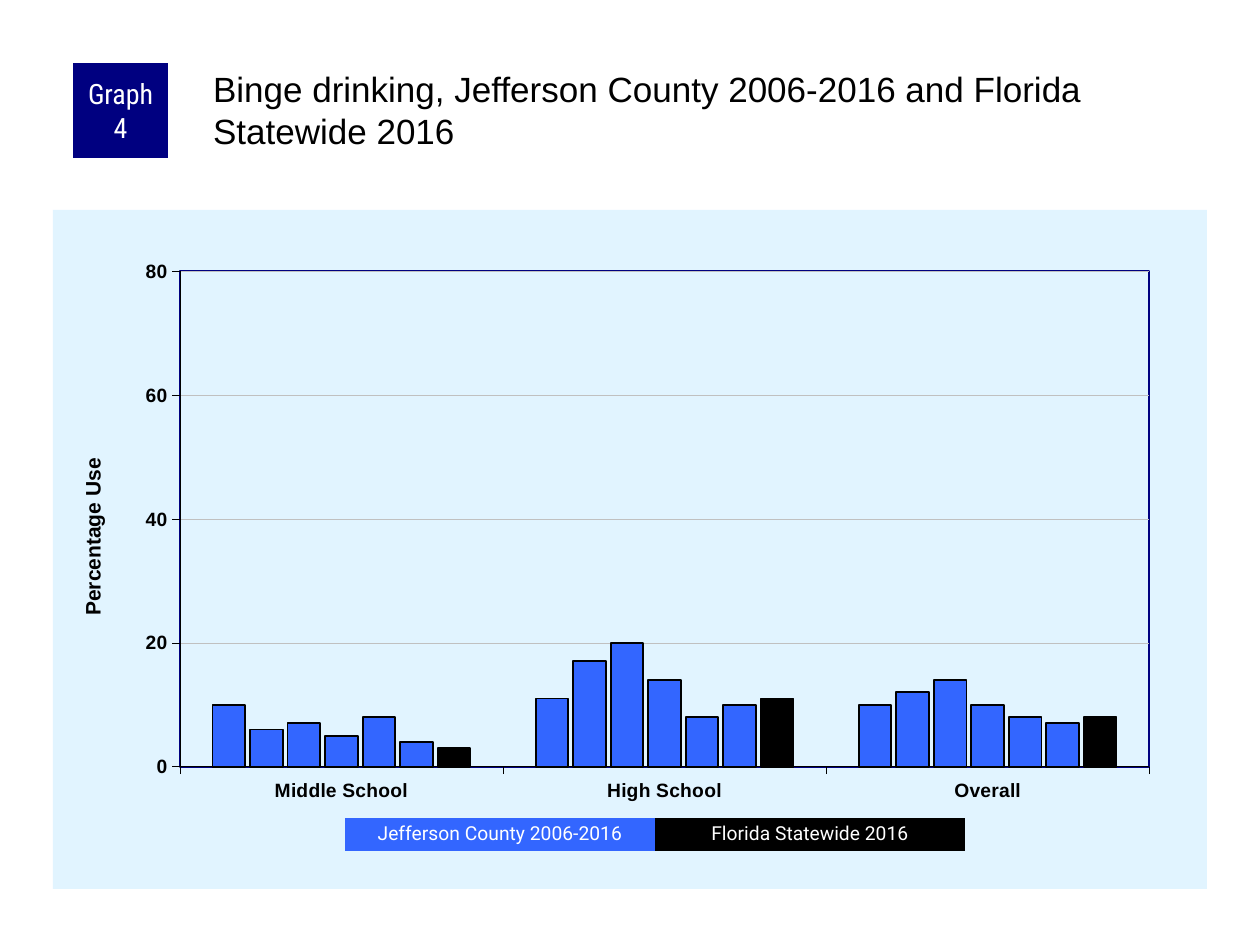
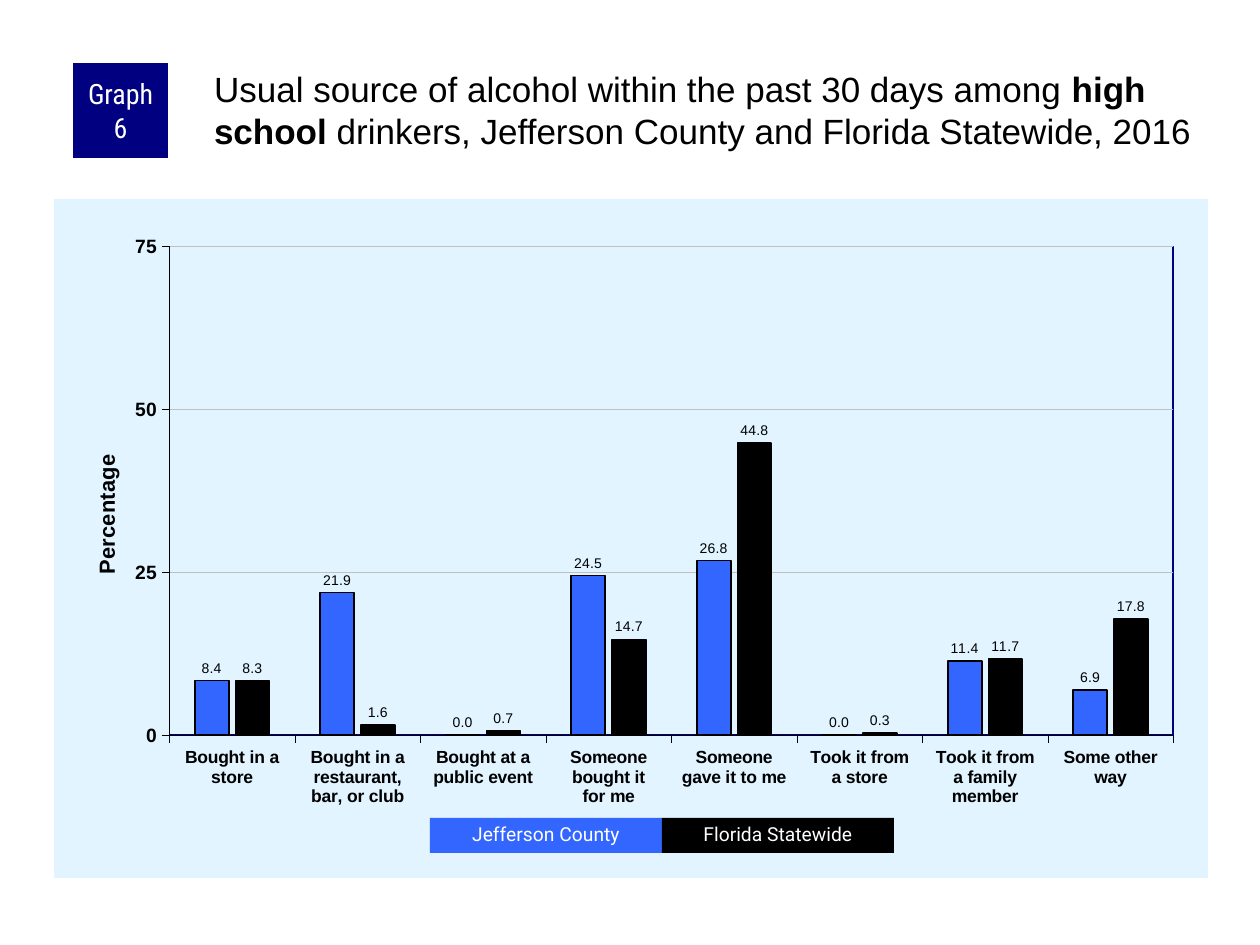
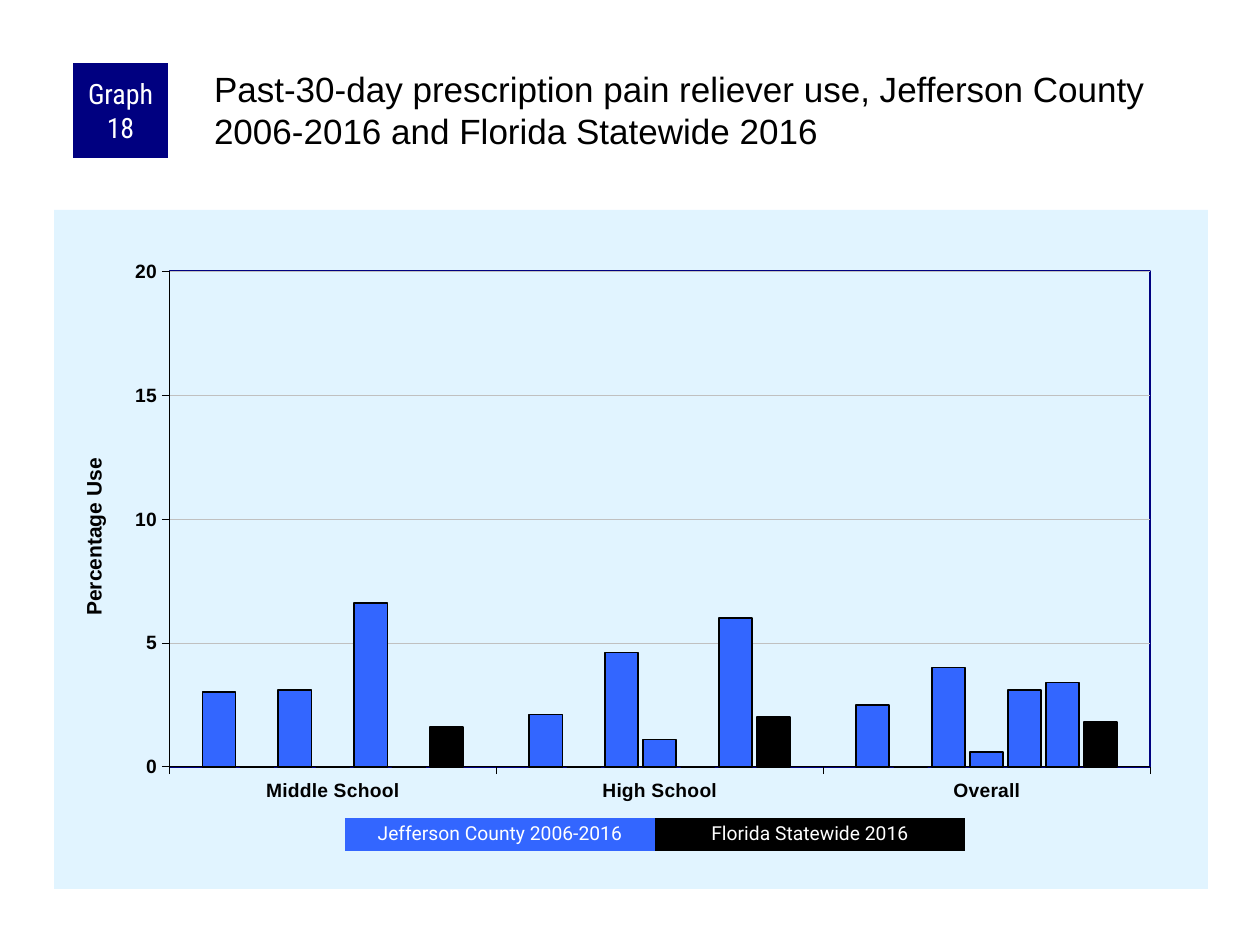
"""Build three survey graph slides, each with a badge, a title, a column chart and a key."""
from pptx import Presentation
from pptx.chart.data import CategoryChartData
from pptx.dml.color import RGBColor
from pptx.enum.chart import XL_CHART_TYPE, XL_LABEL_POSITION, XL_TICK_MARK
from pptx.enum.shapes import MSO_SHAPE
from pptx.enum.text import MSO_ANCHOR, MSO_AUTO_SIZE, PP_ALIGN
from pptx.oxml import parse_xml
from pptx.oxml.ns import nsdecls, qn
from pptx.util import Emu, Pt

COLUMNS = XL_CHART_TYPE.COLUMN_CLUSTERED
OUTSIDE_END = XL_LABEL_POSITION.OUTSIDE_END
TICK_OUT, TICK_NONE = XL_TICK_MARK.OUTSIDE, XL_TICK_MARK.NONE
RECTANGLE = MSO_SHAPE.RECTANGLE
TOP, MIDDLE = MSO_ANCHOR.TOP, MSO_ANCHOR.MIDDLE
NO_AUTOFIT = MSO_AUTO_SIZE.NONE
LEFT, CENTER = PP_ALIGN.LEFT, PP_ALIGN.CENTER

EMU_PER_PX = 914400 / 126
COLORS = {"navy": "000080", "county": "3366FF", "state": "000000", "panel": "E1F4FF",
          "grid": "C0C0C0", "text": "000000", "white": "FFFFFF"}
COLORS_RGB = {name: RGBColor.from_string(value) for name, value in COLORS.items()}
SCHOOLS = ["Middle School", "High School", "Overall"]
TREND_KEY = ["Jefferson County 2006-2016", "Florida Statewide 2016"]

GRAPHS = [
    {"number": 4, "title_left": 209, "panel": (53, 210),
     "title": ["Binge drinking, Jefferson County 2006-2016 and Florida Statewide 2016"],
     "categories": SCHOOLS,
     "series": [(10, 11, 10), (6, 17, 12), (7, 20, 14), (5, 14, 10), (8, 8, 8), (4, 10, 7),
                (3, 11, 8)],
     "maximum": 80, "unit": 20, "axis_title": "Percentage Use", "axis_title_at": (0.02, 0.36),
     "category_size": 11, "gap": 200, "overlap": -15, "labels": False,
     "plot": (0.11, 0.09, 0.84, 0.73), "key": TREND_KEY, "key_box": (345, 818, 310, 33)},
    {"number": 6, "title_left": 210, "panel": (54, 199),
     "title": ["Usual source of alcohol within the past 30 days among ", "high school",
               " drinkers, Jefferson County and Florida Statewide, 2016"],
     "categories": ["Bought in a store", "Bought in a restaurant, bar, or club",
                    "Bought at a public event", "Someone bought it\nfor me",
                    "Someone\ngave it to me", "Took it from\na store",
                    "Took it from\na family member", "Some other way"],
     "series": [(8.4, 21.9, 0, 24.5, 26.8, 0, 11.4, 6.9),
                (8.3, 1.6, 0.7, 14.7, 44.8, 0.3, 11.7, 17.8)],
     "maximum": 75, "unit": 25, "axis_title": "Percentage", "axis_title_at": (0.03, 0.37),
     "category_size": 10, "gap": 150, "overlap": -20, "labels": True,
     "plot": (0.1, 0.07, 0.87, 0.72), "key": ["Jefferson County", "Florida Statewide"],
     "key_box": (430, 818, 232, 35)},
    {"number": 18, "title_left": 210, "panel": (54, 210),
     "title": ["Past-30-day prescription pain reliever use, Jefferson County 2006-2016 "
               "and Florida Statewide 2016"],
     "categories": SCHOOLS,
     "series": [(3, 2.1, 2.5), (0, 0, 0), (3.1, 4.6, 4), (0, 1.1, 0.6), (6.6, 0, 3.1),
                (0, 6, 3.4), (1.6, 2, 1.8)],
     "maximum": 20, "unit": 5, "axis_title": "Percentage Use", "axis_title_at": (0.02, 0.36),
     "category_size": 11, "gap": 200, "overlap": -15, "labels": False,
     "plot": (0.1, 0.09, 0.85, 0.73), "key": TREND_KEY, "key_box": (345, 818, 310, 33)},
]


def px(*lengths):
    """Turn pixel lengths into a list of EMU lengths."""
    return [Emu(round(length * EMU_PER_PX)) for length in lengths]


def set_layout(element, index, fractions, target=""):
    """Give a chart element a manual layout in fractions of the chart."""
    for old_layout in element.findall(qn("c:layout")):
        element.remove(old_layout)
    modes = "".join(f'<c:{side}Mode val="edge"/>' for side in "xy")
    sizes = "".join(f'<c:{side} val="{value}"/>' for side, value in zip("xywh", fractions))
    element.insert(index, parse_xml(f'<c:layout {nsdecls("c")}><c:manualLayout>{target}{modes}'
                                    f'{sizes}</c:manualLayout></c:layout>'))


presentation = Presentation()
presentation.slide_width, presentation.slide_height = px(1260, 945)
title_layout = presentation.slide_layouts[5]

for graph in GRAPHS:
    slide = presentation.slides.add_slide(title_layout)

    title = slide.shapes.title
    title.left, title.top, title.width, title.height = px(graph["title_left"], 63, 998, 105)
    frame = title.text_frame
    frame.auto_size, frame.word_wrap, frame.vertical_anchor = NO_AUTOFIT, True, TOP
    frame.margin_left, frame.margin_top, frame.margin_right, frame.margin_bottom = px(4, 4, 0, 0)
    paragraph = frame.paragraphs[0]
    paragraph.alignment = LEFT
    for position, words in enumerate(graph["title"]):
        run = paragraph.add_run()
        run.text = words
        run.font.name, run.font.size = "Arial", Pt(20)
        run.font.bold = position == 1
        run.font.color.rgb = COLORS_RGB["text"]

    chart_data = CategoryChartData()
    chart_data.categories = graph["categories"]
    for number, values in enumerate(graph["series"], 1):
        chart_data.add_series(f"Series {number}", values)
    chart = slide.shapes.add_chart(COLUMNS, *px(*graph["panel"], 1154, 679), chart_data).chart
    chart.has_legend = chart.has_title = False
    chart.font.name, chart.font.size = "Arial", Pt(8)
    chart.font.color.rgb = COLORS_RGB["text"]

    plot = chart.plots[0]
    plot.gap_width, plot.overlap = graph["gap"], graph["overlap"]
    plot.vary_by_categories = False
    last_series = len(graph["series"]) - 1
    for position, series in enumerate(plot.series):
        series.format.fill.solid()
        series.format.fill.fore_color.rgb = COLORS_RGB["state" if position == last_series
                                                       else "county"]
        series.format.line.color.rgb = COLORS_RGB["text"]
        series.format.line.width = Pt(1)
    if graph["labels"]:
        plot.has_data_labels = True
        labels = plot.data_labels
        labels.show_value, labels.position = True, OUTSIDE_END
        labels.number_format, labels.number_format_is_linked = "0.0", False
        labels.font.name, labels.font.size = "Arial", Pt(8)
        labels.font.color.rgb = COLORS_RGB["text"]

    value_axis = chart.value_axis
    for axis, size in ((chart.category_axis, graph["category_size"]), (value_axis, 11)):
        axis.major_tick_mark, axis.minor_tick_mark = TICK_OUT, TICK_NONE
        axis.format.line.color.rgb = COLORS_RGB["text"]
        axis.format.line.width = Pt(0.25)
        font = axis.tick_labels.font
        font.name, font.size, font.bold = "Arial", Pt(size), True
        font.color.rgb = COLORS_RGB["text"]
    value_axis.minimum_scale, value_axis.maximum_scale = 0, graph["maximum"]
    value_axis.major_unit = graph["unit"]
    value_axis.has_major_gridlines = True
    value_axis.major_gridlines.format.line.color.rgb = COLORS_RGB["grid"]
    value_axis.major_gridlines.format.line.width = Pt(0.25)

    axis_title = value_axis.axis_title
    axis_title.text_frame.text = graph["axis_title"]
    font = axis_title.text_frame.paragraphs[0].runs[0].font
    font.name, font.size, font.bold = "Arial", Pt(12.5 if graph["labels"] else 12), True
    font.color.rgb = COLORS_RGB["text"]

    chart_element = chart.element.find(qn("c:chart"))
    plot_area = chart_element.find(qn("c:plotArea"))
    title_element = plot_area.find(qn("c:valAx")).find(qn("c:title"))
    set_layout(title_element, 1, graph["axis_title_at"])
    set_layout(plot_area, 0, graph["plot"], '<c:layoutTarget val="inner"/>')
    plot_area.append(parse_xml(
        f'<c:spPr {nsdecls("c", "a")}><a:noFill/><a:ln w="12700"><a:solidFill>'
        f'<a:srgbClr val="{COLORS["navy"]}"/></a:solidFill></a:ln></c:spPr>'))
    chart_element.addnext(parse_xml(
        f'<c:spPr {nsdecls("c", "a")}><a:solidFill><a:srgbClr val="{COLORS["panel"]}"/>'
        '</a:solidFill><a:ln><a:noFill/></a:ln></c:spPr>'))

    key_left, key_top, key_width, key_height = graph["key_box"]
    boxes = [(f"Graph {graph['number']}", (73, 63, 95, 95), "navy", "Roboto Condensed", 16, 1.0)]
    for position, (words, color) in enumerate(zip(graph["key"], ("county", "state"))):
        box = (key_left + position * key_width, key_top, key_width, key_height)
        boxes.append((words, box, color, "Roboto", 11, 0.9))
    for words, box, color, font_name, size, spacing in boxes:
        shape = slide.shapes.add_shape(RECTANGLE, *px(*box))
        shape.shadow.inherit = False
        shape.fill.solid()
        shape.fill.fore_color.rgb = COLORS_RGB[color]
        shape.line.fill.background()
        frame = shape.text_frame
        frame.word_wrap, frame.vertical_anchor = True, MIDDLE
        frame.margin_left, frame.margin_top, frame.margin_right, frame.margin_bottom = px(6, 0, 6, 0)
        frame.text = words
        paragraph = frame.paragraphs[0]
        paragraph.alignment, paragraph.line_spacing = CENTER, spacing
        font = paragraph.runs[0].font
        font.name, font.size = font_name, Pt(size)
        font.color.rgb = COLORS_RGB["white"]

presentation.save("out.pptx")
